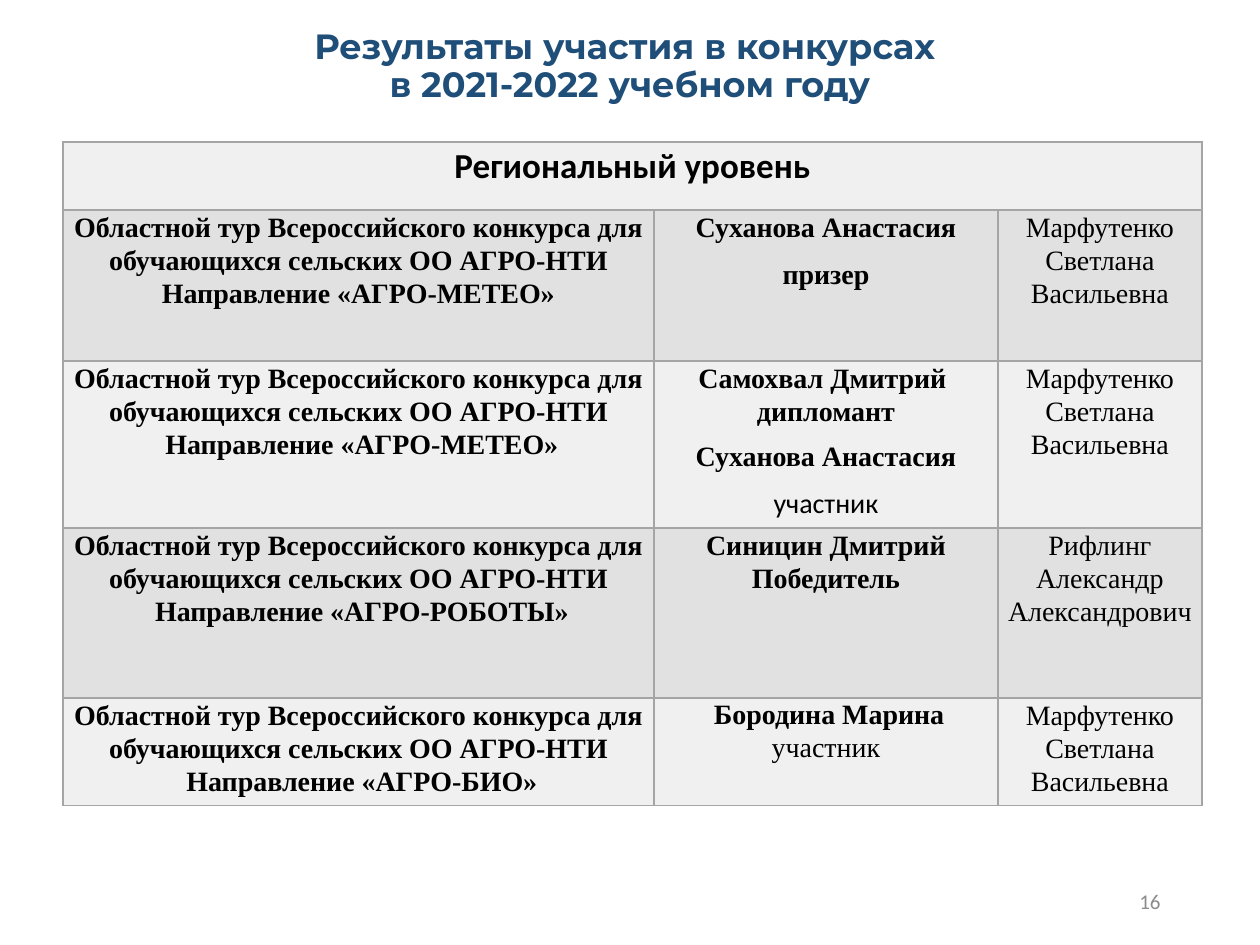
from pptx import Presentation
from pptx.dml.color import RGBColor as Rgb
from pptx.enum.text import MSO_ANCHOR as Anchor, PP_ALIGN as Align
from pptx.oxml import parse_xml
from pptx.oxml.ns import nsdecls
from pptx.util import Emu, Pt

SCALE = 914400 / 126
BODY = dict(name="Times New Roman", size=Pt(16), bold=True)
PLAIN = dict(BODY, bold=False)
SANS = dict(PLAIN, name="Calibri")
HEAD = dict(name="Calibri", size=Pt(20), bold=True)
TITLE = dict(name="Montserrat", size=Pt(20), bold=True)
PAGE = dict(name="Calibri", size=Pt(12), bold=False)
TIGHT = dict(alignment=Align.CENTER, line_spacing=1.07, space_after=Pt(0))
LOOSE = dict(TIGHT, space_after=Pt(8))
SINGLE = dict(LOOSE, line_spacing=1.0)
TOUR = "Областной тур Всероссийского конкурса для обучающихся сельских ОО АГРО-НТИ"
COLS = [591, 344, 204]
ROWS = [68, 151, 165, 170, 69]
FILLS = ["F0F0F0", "E1E1E1"]
LINE = "A5A5A5"


def px(n):
    return Emu(round(n * SCALE))


def color(text):
    return Rgb.from_string(text)


def apply(obj, form):
    for key, val in form.items():
        setattr(obj, key, val)


def write(frame, paras, ink="000000"):
    for i, (form, runs) in enumerate(paras):
        para = frame.paragraphs[0] if i == 0 else frame.add_paragraph()
        apply(para, form)
        for j, (text, font) in enumerate(runs):
            if j and runs[j - 1][0].endswith("\n"):
                para.add_line_break()
            run = para.add_run()
            run.text = text.rstrip("\n")
            apply(run.font, font)
            run.font.color.rgb = color(ink)


def add_text(slide, box, paras, ink):
    frame = slide.shapes.add_textbox(*map(px, box)).text_frame
    apply(frame, dict(word_wrap=True, vertical_anchor=Anchor.MIDDLE))
    write(frame, paras, ink)


def add_edges(cell):
    props = cell._tc.get_or_add_tcPr()
    for side in ("lnL", "lnR", "lnT", "lnB"):
        props.append(parse_xml(
            f'<a:{side} {nsdecls("a")} w="12700"><a:solidFill>'
            f'<a:srgbClr val="{LINE}"/></a:solidFill></a:{side}>'))


def style(cell, fill, pad):
    apply(cell, dict(margin_left=px(pad), margin_right=px(pad),
                     margin_top=0, margin_bottom=0))
    add_edges(cell)
    cell.fill.solid()
    cell.fill.fore_color.rgb = color(fill)


def entry(topic, result, mentor):
    contest = [(TIGHT, [(TOUR, BODY)]),
               (TIGHT, [(f" Направление «{topic}", BODY)])]
    return [contest, result, [(LOOSE, [(mentor, PLAIN)])]]


def add_grid(slide, data):
    box = map(px, (63, 142, sum(COLS), sum(ROWS)))
    table = slide.shapes.add_table(len(ROWS), len(COLS), *box).table
    for col, width in zip(table.columns, COLS):
        col.width = px(width)
    for r, (row, height) in enumerate(zip(table.rows, ROWS)):
        row.height = px(height)
        pad = 6 if r in (0, len(ROWS) - 1) else 9
        for cell in row.cells:
            style(cell, FILLS[r % 2], pad)
    table.cell(0, 0).merge(table.cell(0, len(COLS) - 1))
    for r, row in enumerate(data):
        for c, paras in enumerate(row):
            write(table.cell(r, c).text_frame, paras)


def main():
    deck = Presentation()
    deck.slide_width, deck.slide_height = px(1260), px(945)
    slide = deck.slides.add_slide(deck.slide_layouts[6])
    add_text(slide, (87, 30, 1086, 74), [
        (dict(alignment=Align.CENTER, line_spacing=0.9),
         [("Результаты участия в конкурсах \n", TITLE),
          ("в 2021-2022 учебном году", TITLE)])], "1F4E79")
    teacher = "Марфутенко Светлана Васильевна"
    add_grid(slide, [
        [[(LOOSE, [("Региональный уровень", HEAD)])]],
        entry("АГРО-МЕТЕО» ", [
            (LOOSE, [("Суханова Анастасия", BODY)]),
            (LOOSE, [("призер", BODY)])], teacher),
        entry("АГРО-МЕТЕО»", [
            (LOOSE, [("Самохвал Дмитрий  дипломант", BODY)]),
            (SINGLE, [("Суханова Анастасия", BODY)]),
            (SINGLE, [("участник", SANS)])], teacher),
        entry("АГРО-РОБОТЫ»", [
            (LOOSE, [("Синицин Дмитрий Победитель", BODY)])],
            "Рифлинг Александр Александрович"),
        entry("АГРО-БИО»", [
            (SINGLE, [(" ", dict(SANS, bold=True)),
                      ("Бородина Марина ", BODY),
                      ("участник", PLAIN)])], teacher),
    ])
    add_text(slide, (890, 876, 283, 50), [
        (dict(alignment=Align.RIGHT), [("16", PAGE)])], "8C8C8C")
    deck.save("out.pptx")


if __name__ == "__main__":
    main()
